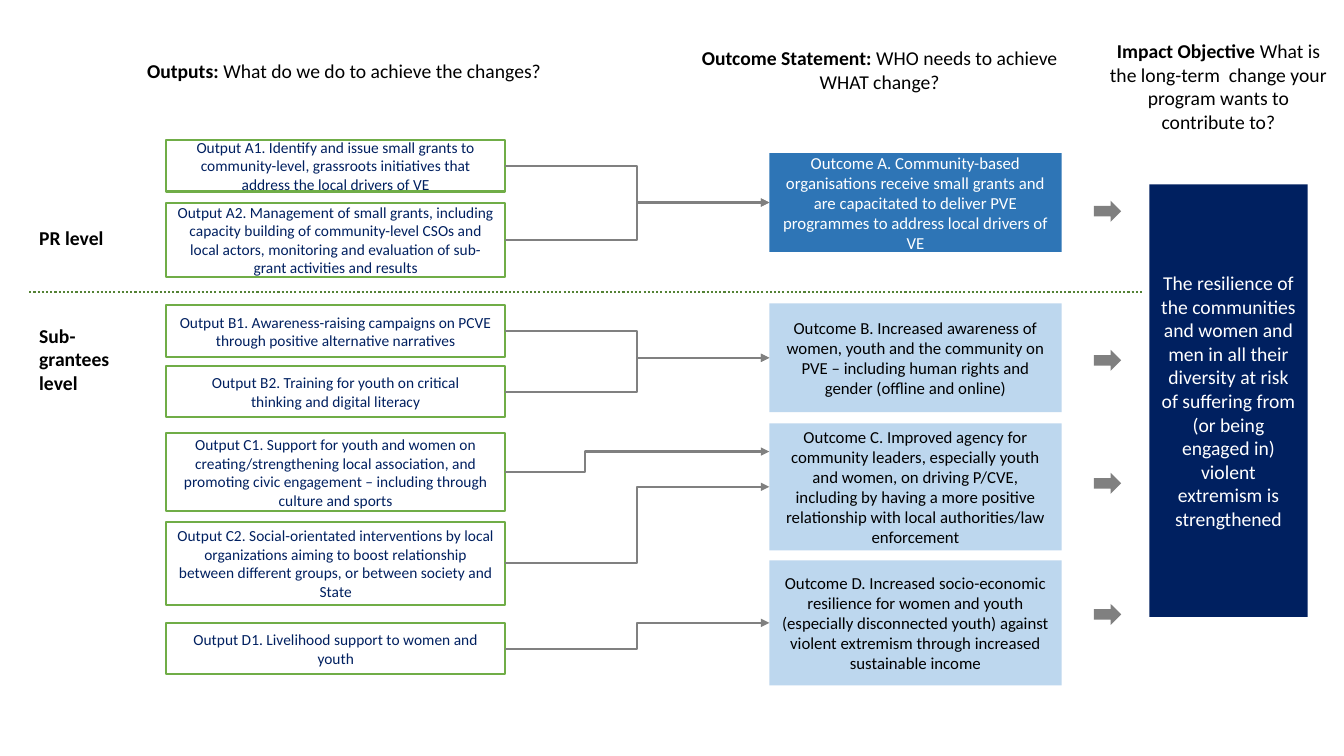
from dataclasses import dataclass
from pptx import Presentation
from pptx.dml.color import RGBColor
from pptx.enum.dml import MSO_LINE
from pptx.enum.shapes import MSO_CONNECTOR, MSO_SHAPE
from pptx.enum.text import MSO_ANCHOR, MSO_AUTO_SIZE, PP_ALIGN
from pptx.oxml.ns import qn
from pptx.util import Inches, Pt
from lxml import etree

RECT, ARROW = MSO_SHAPE.RECTANGLE, MSO_SHAPE.RIGHT_ARROW
ELBOW, STRAIGHT = MSO_CONNECTOR.ELBOW, MSO_CONNECTOR.STRAIGHT
LEFT, CENTER = PP_ALIGN.LEFT, PP_ALIGN.CENTER
LEFT_SIDE, RIGHT_SIDE = 1, 3


@dataclass(frozen=True)
class Theme:
    font: str = "Calibri"
    heading: int = 14
    outcome: int = 12
    output: int = 11
    line: float = 1.5
    black: str = "000000"
    white: str = "FFFFFF"
    navy: str = "002060"
    blue: str = "2E75B6"
    pale: str = "BDD7EE"
    green: str = "70AD47"
    dark_green: str = "548235"
    grey: str = "808080"


T = Theme()

# Content: headings and labels as (bold, regular, box, alignment)
HEADINGS = [
    ("Outputs: ", "What do we do to achieve the changes?", (1.36, 0.54, 4.22, 0.34), LEFT),
    ("Outcome Statement: ", "WHO needs to achieve WHAT change?", (6.67, 0.41, 4.11, 0.57), CENTER),
    ("Impact Objective ", "What is the long-term  change your program wants to contribute to?",
     (10.85, 0.34, 2.47, 1.04), CENTER),
    ("PR level", "", (0.29, 2.19, 0.96, 0.34), LEFT),
    ("Sub-grantees level", "", (0.29, 3.16, 1.08, 0.81), LEFT),
]

# Outputs: key -> (text, top, height)
OUTPUTS = {
    "A1": ("Output A1. Identify and issue small grants to community-level, grassroots "
           "initiatives that address the local drivers of VE", 1.39, 0.51),
    "A2": ("Output A2. Management of small grants, including capacity building of "
           "community-level CSOs and local actors, monitoring and evaluation of sub-grant "
           "activities and results", 2.01, 0.74),
    "B1": ("Output B1. Awareness-raising campaigns on PCVE through positive alternative "
           "narratives", 3.03, 0.51),
    "B2": ("Output B2. Training for youth on critical\nthinking and digital literacy", 3.63, 0.51),
    "C1": ("Output C1. Support for youth and women on creating/strengthening local "
           "association, and promoting civic engagement – including through culture and "
           "sports", 4.3, 0.77),
    "C2": ("Output C2. Social-orientated interventions by local organizations aiming to boost "
           "relationship between different groups, or between society and State", 5.18, 0.82),
    "D1": ("Output D1. Livelihood support to women and\nyouth", 6.18, 0.51),
}

# Outcomes: key -> (text, top, height, arrow top, fill, text colour)
OUTCOMES = {
    "A": ("Outcome A. Community-based organisations receive small grants and are capacitated "
          "to deliver PVE programmes to address local drivers of VE",
          1.52, 0.98, 1.99, T.blue, T.white),
    "B": ("Outcome B. Increased awareness of women, youth and the community on PVE – including "
          "human rights and gender (offline and online)", 3.01, 1.08, 3.47, T.pale, T.black),
    "C": ("Outcome C. Improved agency for community leaders, especially youth and women, on "
          "driving P/CVE,\nincluding by having a more positive relationship with local "
          "authorities/law enforcement", 4.2, 1.26, 4.69, T.pale, T.black),
    "D": ("Outcome D. Increased socio-economic resilience for women and youth (especially "
          "disconnected youth) against violent extremism through increased sustainable income",
          5.56, 1.24, 5.99, T.pale, T.black),
}
IMPACT = ("The resilience of the communities\nand women and men in all their\n"
          "diversity at risk of suffering from\n(or being engaged in) violent\n"
          "extremism is strengthened")

# Links that end off the middle of their outcome: output -> (end height, bend share)
OFF_CENTRE = {"C1": (4.48, 0.303), "C2": (4.83, 0.5)}

# Columns: (left, width)
OUTPUT_COL, OUTCOME_COL, ARROW_COL, IMPACT_COL = (1.65, 3.36), (7.63, 2.9), (10.85, 0.27), (11.4, 1.57)
DIVIDER = (0.29, 11.34, 2.9)

prs = Presentation()
prs.slide_width, prs.slide_height = Inches(13.33), Inches(7.5)
s = prs.slides.add_slide(prs.slide_layouts[6])


def rgb(colour):
    return RGBColor.from_string(colour)


def write(p, text, size, colour, bold=False, align=CENTER):
    p.alignment = align
    r = p.add_run()
    r.text = text
    f = r.font
    f.name, f.size, f.bold, f.color.rgb = T.font, Pt(size), bold, rgb(colour)


def block(kind, box, text="", fill=None, outline=None, size=T.outcome, colour=T.black):
    sp = s.shapes.add_shape(kind, *map(Inches, box))
    sp.shadow.inherit = False
    if fill:
        sp.fill.solid()
        sp.fill.fore_color.rgb = rgb(fill)
    else:
        sp.fill.background()
    if outline:
        sp.line.color.rgb = rgb(outline)
        sp.line.width = Pt(T.line)
    else:
        sp.line.fill.background()
    tf = sp.text_frame
    tf.word_wrap, tf.vertical_anchor = True, MSO_ANCHOR.MIDDLE
    for i, line in enumerate(text.split("\n") if text else []):
        write(tf.paragraphs[0] if i == 0 else tf.add_paragraph(), line, size, colour)
    return sp


def connector(kind, x1, y1, x2, y2, colour):
    c = s.shapes.add_connector(kind, *map(Inches, (x1, y1, x2, y2)))
    c.line.color.rgb, c.line.width = rgb(colour), Pt(T.line)
    etree.SubElement(c._element.spPr, qn("a:effectLst"))
    return c


# Headings and level labels
for bold, regular, box, align in HEADINGS:
    tf = s.shapes.add_textbox(*map(Inches, box)).text_frame
    tf.word_wrap, tf.auto_size = True, MSO_AUTO_SIZE.SHAPE_TO_FIT_TEXT
    write(tf.paragraphs[0], bold, T.heading, T.black, True, align)
    if regular:
        write(tf.paragraphs[0], regular, T.heading, T.black, False, align)

# Outcomes with block arrows, and the impact objective
outcomes = {}
for key, (text, top, height, arrow_top, fill, colour) in OUTCOMES.items():
    outcomes[key] = block(RECT, (OUTCOME_COL[0], top, OUTCOME_COL[1], height), text, fill, colour=colour)
    block(ARROW, (ARROW_COL[0], arrow_top, ARROW_COL[1], 0.21), fill=T.grey)
block(RECT, (IMPACT_COL[0], 1.83, IMPACT_COL[1], 4.29), IMPACT, T.navy, size=T.heading, colour=T.white)

# Outputs, each linked to the outcome that shares its letter
for key, (text, top, height) in OUTPUTS.items():
    output = block(RECT, (OUTPUT_COL[0], top, OUTPUT_COL[1], height), text,
                   outline=T.green, size=T.output, colour=T.navy)
    _, goal_top, goal_height, *_ = OUTCOMES[key[0]]
    end_y, bend = OFF_CENTRE.get(key, (goal_top + goal_height / 2, 0.5))
    link = connector(ELBOW, sum(OUTPUT_COL), top + height / 2, OUTCOME_COL[0], end_y, T.grey)
    link.begin_connect(output, RIGHT_SIDE)
    if key not in OFF_CENTRE:
        link.end_connect(outcomes[key[0]], LEFT_SIDE)
    guides = link._element.spPr.find(qn("a:prstGeom")).find(qn("a:avLst"))
    etree.SubElement(guides, qn("a:gd"), name="adj1", fmla=f"val {round(bend * 100000)}")
    etree.SubElement(link.line._get_or_add_ln(), qn("a:tailEnd"), type="triangle")

# Divider between the two levels
x1, x2, y = DIVIDER
connector(STRAIGHT, x1, y, x2, y, T.dark_green).line.dash_style = MSO_LINE.ROUND_DOT

prs.save("out.pptx")
